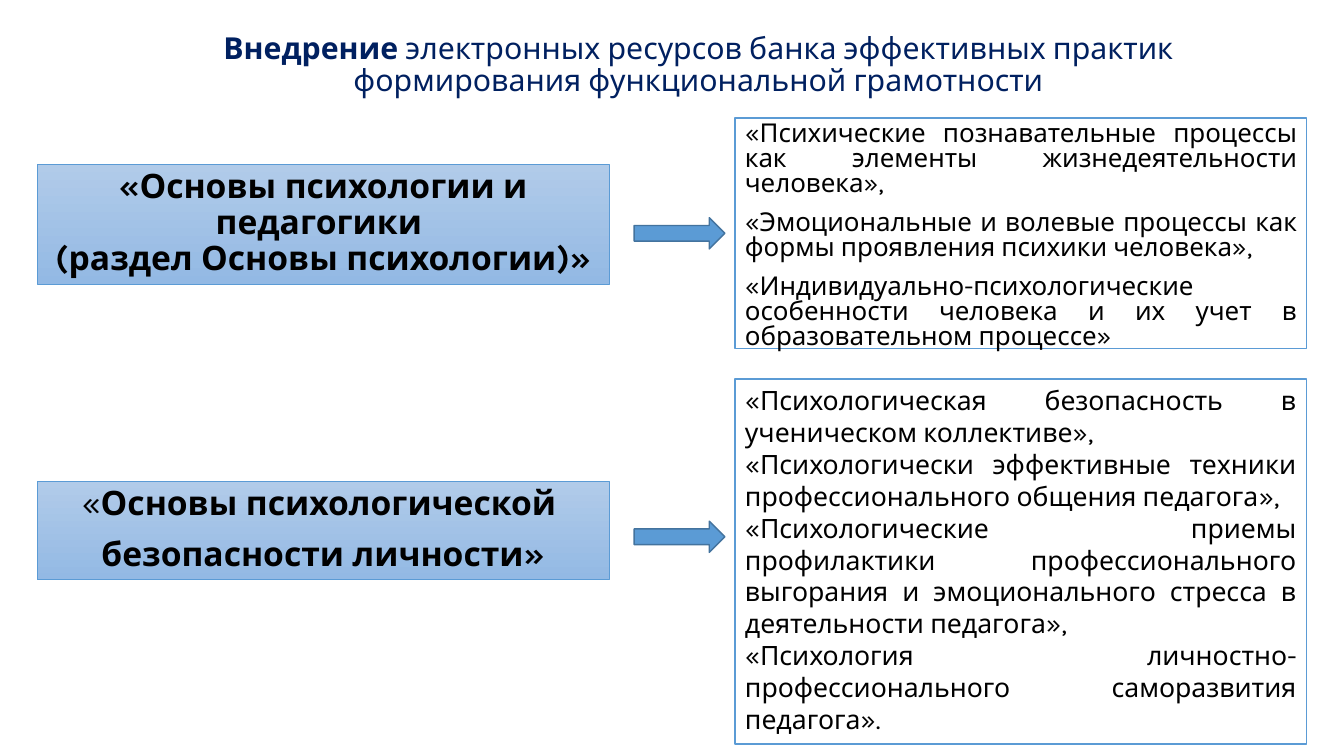
from pptx import Presentation
from pptx.dml.color import RGBColor
from pptx.enum.shapes import MSO_SHAPE
from pptx.enum.text import MSO_ANCHOR, PP_ALIGN
from pptx.util import Inches, Pt

FONT = "Karla"
NAVY, BLACK, WHITE = "002060", "000000", "FFFFFF"
BLUE, DARK_BLUE = "5B9BD5", "43739E"
GRADIENT = ("B1CBE9", "93B9E4")

# A paragraph is a list of (text, bold) runs.
HEADING = [[
    ("Внедрение", True),
    (" электронных ресурсов банка эффективных практик "
     "формирования функциональной грамотности", False),
]]

# Each vertical place is (top, height) in inches.
SECTIONS = [
    {
        "topic": [[("«Основы психологии и педагогики \v"
                    "(раздел Основы психологии)»", True)]],
        "topic_place": (1.63, 1.19),
        "arrow_top": 2.16,
        "details": [
            "«Психические познавательные процессы как элементы "
            "жизнедеятельности человека», ",
            "«Эмоциональные и волевые процессы как формы проявления "
            "психики человека», ",
            "«Индивидуально-психологические особенности человека и их учет "
            "в образовательном процессе»",
        ],
        "details_place": (1.17, 2.29),
        "details_style": {"size": 18.5, "spacing": 0.8, "before": 10},
    },
    {
        "topic": [[("«", False), ("Основы психологической ", True)],
                  [("безопасности личности»", True)]],
        "topic_place": (4.78, 0.97),
        "arrow_top": 5.17,
        "details": [
            "«Психологическая безопасность в ученическом коллективе»,",
            "«Психологически эффективные техники профессионального общения "
            "педагога»,",
            "«Психологические приемы профилактики профессионального выгорания "
            "и эмоционального стресса в деятельности педагога»,",
            "«Психология личностно-профессионального саморазвития педагога».",
        ],
        "details_place": (3.76, 3.62),
        "details_style": {"size": 19, "spacing": 1.0, "before": 0},
    },
]

BOX_WIDTH = 5.67
TOPIC_LEFT, ARROW_LEFT, DETAILS_LEFT = 0.37, 6.29, 7.29
ARROW_WIDTH, ARROW_HEIGHT = 0.9, 0.31


def color(hex_string):
    return RGBColor.from_string(hex_string)


def write(shape, paragraphs, size, align, spacing=0.9, before=0, ink=BLACK):
    frame = shape.text_frame
    frame.word_wrap = True
    frame.vertical_anchor = MSO_ANCHOR.TOP
    for index, parts in enumerate(paragraphs):
        paragraph = frame.paragraphs[0] if index == 0 else frame.add_paragraph()
        paragraph.alignment = align
        paragraph.line_spacing = spacing
        paragraph.space_before = Pt(before)
        if len(parts) == 1:
            paragraph.text = parts[0][0]
            paragraph.font.bold = parts[0][1]
        else:
            for text, _ in parts:
                paragraph.add_run().text = text
        for position, run in enumerate(paragraph.runs):
            run.font.name = FONT
            run.font.size = Pt(size)
            run.font.color.rgb = color(ink)
            run.font.bold = parts[min(position, len(parts) - 1)][1]


def add_block(kind, left, top, width, height, fill, line, line_width):
    """Add a preset shape; fill is one hex colour or a pair for a gradient."""
    block = slide.shapes.add_shape(
        kind, Inches(left), Inches(top), Inches(width), Inches(height))
    block.shadow.inherit = False
    if isinstance(fill, tuple):
        block.fill.gradient()
        block.fill.gradient_angle = 270
        for stop, shade, position in zip(block.fill.gradient_stops, fill, (0, 1)):
            stop.color.rgb = color(shade)
            stop.position = position
    else:
        block.fill.solid()
        block.fill.fore_color.rgb = color(fill)
    block.line.color.rgb = color(line)
    block.line.width = Pt(line_width)
    return block


presentation = Presentation()
presentation.slide_width = Inches(13.33)
presentation.slide_height = Inches(7.5)
slide = presentation.slides.add_slide(presentation.slide_layouts[6])

heading = slide.shapes.add_textbox(
    Inches(1.18), Inches(0.28), Inches(11.5), Inches(1.12))
write(heading, HEADING, 21.6, PP_ALIGN.CENTER, ink=NAVY)

for section in SECTIONS:
    top, height = section["details_place"]
    details = add_block(MSO_SHAPE.RECTANGLE, DETAILS_LEFT, top,
                        BOX_WIDTH, height, WHITE, BLUE, 1)
    write(details, [[(text, False)] for text in section["details"]],
          align=PP_ALIGN.JUSTIFY, **section["details_style"])

    top, height = section["topic_place"]
    topic = add_block(MSO_SHAPE.RECTANGLE, TOPIC_LEFT, top,
                      BOX_WIDTH, height, GRADIENT, BLUE, 0.5)
    write(topic, section["topic"], 24, PP_ALIGN.CENTER, before=10)

    add_block(MSO_SHAPE.RIGHT_ARROW, ARROW_LEFT, section["arrow_top"],
              ARROW_WIDTH, ARROW_HEIGHT, BLUE, DARK_BLUE, 1)

presentation.save("out.pptx")
